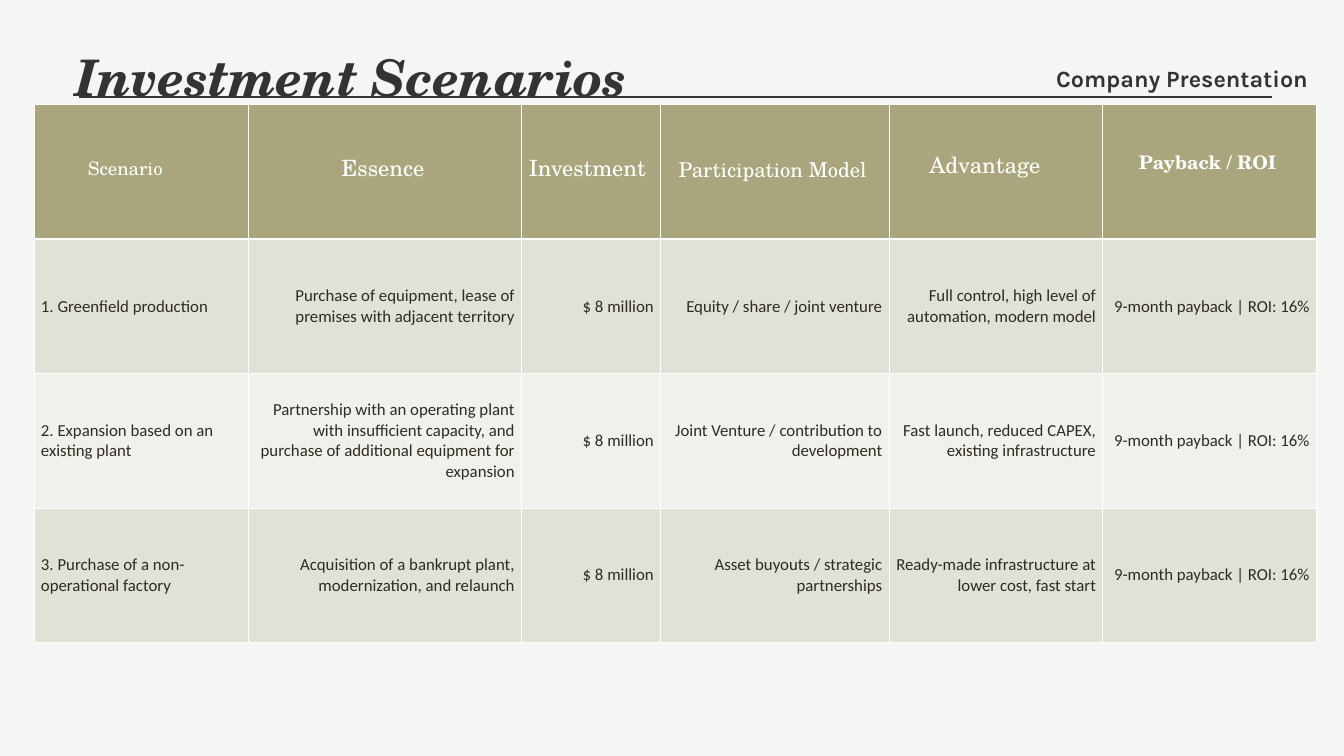
import dataclasses

import lxml.etree
import pptx
import pptx.dml.color
import pptx.enum.shapes
import pptx.enum.text
import pptx.oxml.ns
import pptx.util

Align = pptx.enum.text.PP_ALIGN
Anchor = pptx.enum.text.MSO_ANCHOR
qn = pptx.oxml.ns.qn


@dataclasses.dataclass(frozen=True)
class Theme:
    background: str = "F5F5F4"
    ink: str = "333333"
    cell_ink: str = "2E2B21"
    white: str = "FFFFFF"
    header: str = "A9A57C"
    bands: tuple = ("E2E1D7", "F1F0EC")
    serif: str = "TeX Gyre Schola"
    sans: str = "Karla"
    cell_font: str = "Calibri"
    title_size: int = 54
    tag_size: int = 25
    cell_size: int = 18
    rule: float = 2.25
    border: int = 1
    header_border: int = 3


GRID_COLUMNS, GRID_ROWS = 20, 11.25
TABLE_LEFT, TABLE_TOP, ROW_HEIGHT = 0.51, 1.56, 2
COLUMN_WIDTHS = [3.18, 4.07, 2.07, 3.4, 3.18, 3.18]
# Label, left, top, width, type size, bold
HEADINGS = [
    ("Scenario", 1.21, 2.29, 2.42, 20, False),
    ("Essence", 4.98, 2.24, 2.42, 24, False),
    ("Investment", 7.77, 2.24, 2.42, 24, False),
    ("Participation Model", 10, 2.28, 3.45, 22, False),
    ("Advantage", 13.73, 2.2, 2.42, 24, False),
    ("Payback / ROI", 16.85, 2.2, 2.75, 20, True),
]
INVESTMENT = "$ 8 million"
PAYBACK = "9-month payback | ROI: 16%"
# Scenario, essence, participation model, advantage
SCENARIOS = [
    ("1. Greenfield production",
     "Purchase of equipment, lease of premises with adjacent territory",
     "Equity / share / joint venture",
     "Full control, high level of automation, modern model"),
    ("2. Expansion based on an existing plant",
     "Partnership with an operating plant with insufficient capacity, "
     "and purchase of additional equipment for expansion",
     "Joint Venture / contribution to development",
     "Fast launch, reduced CAPEX, existing infrastructure"),
    ("3. Purchase of a non-operational factory",
     "Acquisition of a bankrupt plant, modernization, and relaunch",
     "Asset buyouts / strategic partnerships",
     "Ready-made infrastructure at lower cost, fast start"),
]


def color(value):
    return pptx.dml.color.RGBColor.from_string(value)


class PageBuilder:
    """Draws on one slide; lengths are columns and rows of a square grid."""

    def __init__(self, deck, theme):
        self.theme = theme
        self.unit = deck.slide_width / GRID_COLUMNS
        self.page = deck.slides.add_slide(deck.slide_layouts.get_by_name("Title Only"))
        self.page.background.fill.solid()
        self.page.background.fill.fore_color.rgb = color(theme.background)

    def span(self, *lengths):
        return [pptx.util.Emu(round(length * self.unit)) for length in lengths]

    def add_text(self, frame, text, ink, align=Align.LEFT, leading=None, **font):
        para = frame.paragraphs[0]
        para.alignment = align
        if leading:
            para.line_spacing = pptx.util.Pt(leading)
        run = para.add_run()
        run.text = text
        font["size"] = pptx.util.Pt(font["size"])
        for name, value in font.items():
            setattr(run.font, name, value)
        run.font.color.rgb = color(ink)

    def fit(self, frame, margin=None):
        settings = {"word_wrap": True, "vertical_anchor": Anchor.TOP,
                    "auto_size": pptx.enum.text.MSO_AUTO_SIZE.SHAPE_TO_FIT_TEXT}
        if margin is not None:
            for side in ("left", "top", "right", "bottom"):
                settings[f"margin_{side}"] = margin
        for name, value in settings.items():
            setattr(frame, name, value)

    def title(self, text, *place):
        box = self.page.shapes.title
        for name, value in zip(("left", "top", "width", "height"), self.span(*place)):
            setattr(box, name, value)
        self.fit(box.text_frame, margin=0)
        self.add_text(box.text_frame, text, self.theme.ink, Align.CENTER, leading=102,
                      name=self.theme.serif, size=self.theme.title_size,
                      bold=True, italic=True)

    def label(self, text, place, ink, margin=None, **style):
        box = self.page.shapes.add_textbox(*self.span(*place))
        self.fit(box.text_frame, margin)
        self.add_text(box.text_frame, text, ink, **style)

    def rule(self, left, right, top):
        line = self.page.shapes.add_connector(
            pptx.enum.shapes.MSO_CONNECTOR.STRAIGHT, *self.span(left, top, right, top))
        line.line.color.rgb = color(self.theme.ink)
        line.line.width = pptx.util.Pt(self.theme.rule)
        lxml.etree.SubElement(line._element.spPr, qn("a:effectLst"))

    def paint_cell(self, cell, fill, top, bottom):
        """Fill a cell and border it; top and bottom are line widths in points."""
        properties = cell._tc.get_or_add_tcPr()
        side = self.theme.border
        for name, width in zip("LRTB", (side, side, top, bottom)):
            line = lxml.etree.SubElement(properties, qn(f"a:ln{name}"),
                                         w=str(int(pptx.util.Pt(width))))
            solid = lxml.etree.SubElement(line, qn("a:solidFill"))
            lxml.etree.SubElement(solid, qn("a:srgbClr"), val=self.theme.white)
        cell.fill.solid()
        cell.fill.fore_color.rgb = color(fill)

    def table(self, left, top, widths, row_height, records):
        """Draw a blank header band above the records."""
        theme = self.theme
        count = len(records) + 1
        table = self.page.shapes.add_table(
            count, len(widths),
            *self.span(left, top, sum(widths), count * row_height)).table
        table.horz_banding = False
        for column, width in zip(table.columns, self.span(*widths)):
            column.width = width
        for index, row in enumerate(table.rows):
            row.height = self.span(row_height)[0]
            fill = theme.bands[(index - 1) % 2] if index else theme.header
            upper = theme.header_border if index == 1 else theme.border
            lower = theme.border if index else theme.header_border
            for cell in row.cells:
                self.paint_cell(cell, fill, upper, lower)
                cell.vertical_anchor = Anchor.MIDDLE
            if index:
                for column, (cell, text) in enumerate(zip(row.cells, records[index - 1])):
                    self.add_text(cell.text_frame, text, theme.cell_ink,
                                  Align.RIGHT if column else Align.LEFT,
                                  name=theme.cell_font, size=theme.cell_size, bold=False)


def main():
    deck = pptx.Presentation()
    deck.slide_width = pptx.util.Inches(GRID_COLUMNS)
    deck.slide_height = pptx.util.Inches(GRID_ROWS)
    theme = Theme()
    builder = PageBuilder(deck, theme)

    builder.rule(1.18, 18.93, 1.44)
    builder.title("Investment Scenarios", 0.78, 0.17, 8.89, 1.27)
    records = [(scenario, essence, INVESTMENT, model, advantage, PAYBACK)
               for scenario, essence, model, advantage in SCENARIOS]
    builder.table(TABLE_LEFT, TABLE_TOP, COLUMN_WIDTHS, ROW_HEIGHT, records)
    builder.label("Company Presentation", (13.95, 0.89, 5.51, 0.47), theme.ink,
                  margin=0, align=Align.RIGHT, leading=35,
                  name=theme.sans, size=theme.tag_size, bold=True)
    for text, left, top, width, size, bold in HEADINGS:
        builder.label(text, (left, top, width, 0.5), theme.white,
                      name=theme.serif, size=size, bold=bold)

    deck.save("out.pptx")


if __name__ == "__main__":
    main()
